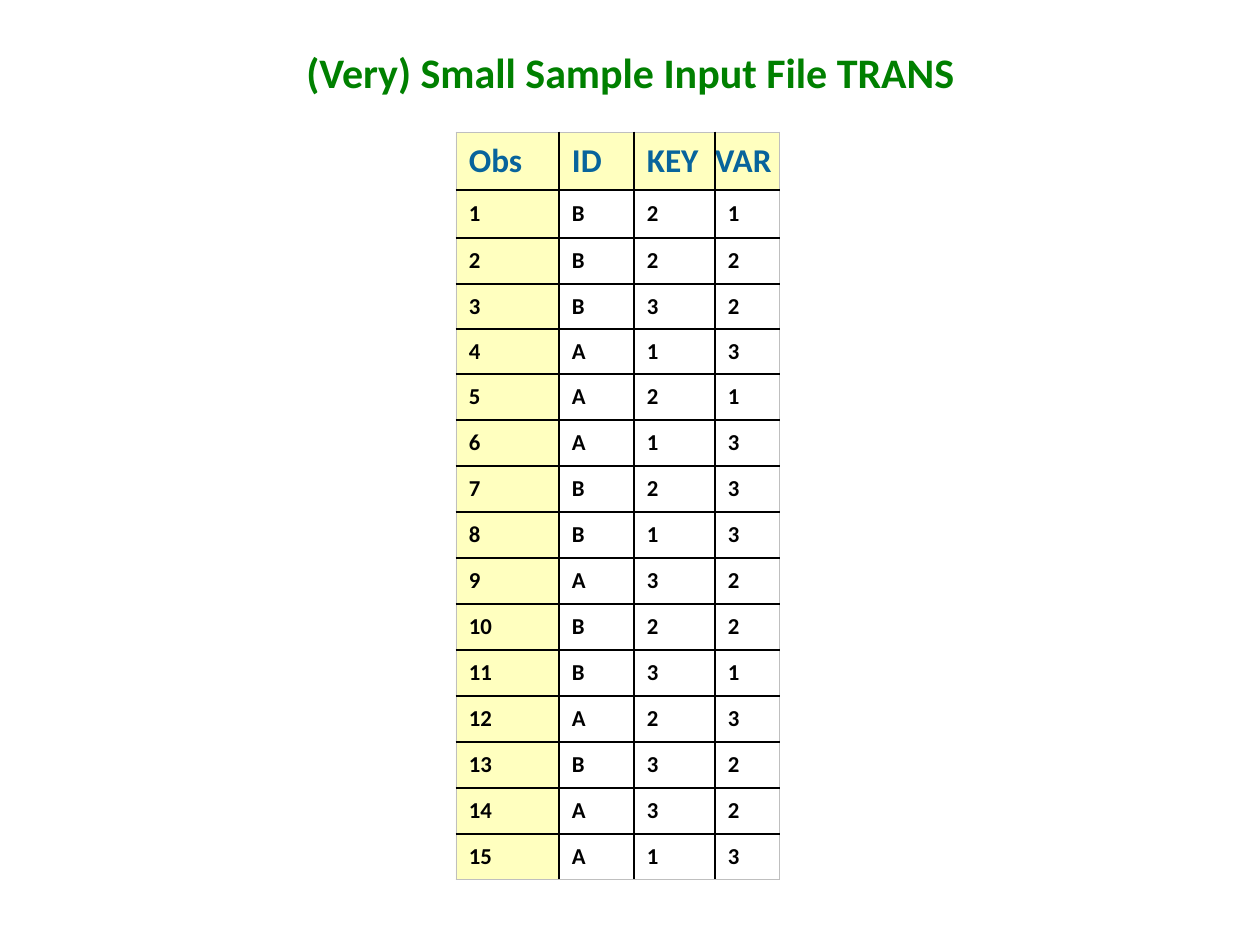
"""Build a slide with a small sample input table."""
from dataclasses import dataclass

from lxml import etree
from pptx import Presentation, util as u
from pptx.dml.color import RGBColor
from pptx.enum import text
from pptx.oxml import ns

PX_PER_INCH = 126
FONT = "Calibri"
GREEN = RGBColor(0x00, 0x80, 0x00)
BLUE = RGBColor(0x08, 0x64, 0x9C)
BLACK = RGBColor(0x00, 0x00, 0x00)
GRAY = RGBColor(0xBF, 0xBF, 0xBF)
YELLOW = RGBColor(0xFF, 0xFF, 0x00)
YELLOW_ALPHA = 25000

HEADERS = ("Obs", "ID", "KEY", "VAR")
OBSERVATIONS = (
    "B21", "B22", "B32", "A13", "A21", "A13", "B23", "B13",
    "A32", "B22", "B31", "A23", "B32", "A32", "A13",
)
COLUMN_WIDTHS = (103, 75, 81, 65)
ROW_HEIGHTS = (58, 48, 46, 45, 45) + (46,) * 11


@dataclass(frozen=True)
class Border:
    color: RGBColor
    width: float


@dataclass(frozen=True)
class CellStyle:
    size: int
    color: RGBColor
    shaded: bool
    inset_x: int = 13
    inset_y: int = 8


INNER = Border(BLACK, 1)
OUTER = Border(GRAY, 0.5)


def px(length: int) -> u.Emu:
    return u.Emu(round(length * 914400 / PX_PER_INCH))


def set_attributes(target, values: dict) -> None:
    for name, value in values.items():
        setattr(target, name, value)


def format_font(font, size: int, color: RGBColor) -> None:
    set_attributes(font, {"name": FONT, "size": u.Pt(size), "bold": True})
    font.color.rgb = color


def set_borders(cell, borders: dict[str, Border]) -> None:
    properties = cell._tc.get_or_add_tcPr()
    for index, (side, border) in enumerate(borders.items()):
        line = etree.Element(ns.qn(f"a:ln{side}"), w=str(u.Pt(border.width)))
        fill = etree.SubElement(line, ns.qn("a:solidFill"))
        etree.SubElement(fill, ns.qn("a:srgbClr"), val=str(border.color))
        properties.insert(index, line)


def fill_cell(cell, shaded: bool) -> None:
    if not shaded:
        cell.fill.background()
        return
    cell.fill.solid()
    cell.fill.fore_color.rgb = YELLOW
    color = cell._tc.tcPr.find(f".//{ns.qn('a:srgbClr')}")
    etree.SubElement(color, ns.qn("a:alpha"), val=str(YELLOW_ALPHA))


def write_cell(cell, content: str, style: CellStyle) -> None:
    set_attributes(cell, {
        "text": content,
        "vertical_anchor": text.MSO_ANCHOR.MIDDLE,
        "margin_left": px(style.inset_x),
        "margin_right": px(style.inset_x),
        "margin_top": px(style.inset_y),
        "margin_bottom": px(style.inset_y),
    })
    format_font(cell.text_frame.paragraphs[0].runs[0].font, style.size, style.color)
    fill_cell(cell, style.shaded)


def cell_style(row: int, column: int) -> CellStyle:
    if row > 0:
        return CellStyle(13, BLACK, column == 0)
    if HEADERS[column] == "VAR":
        return CellStyle(19, BLUE, True, 0, 0)
    return CellStyle(19, BLUE, True)


def add_title(slide, content: str) -> None:
    title = slide.shapes.title
    set_attributes(title, {
        "left": px(87), "top": px(35), "width": px(1087), "height": px(74),
    })
    set_attributes(title.text_frame, {
        "text": content, "word_wrap": True,
        "vertical_anchor": text.MSO_ANCHOR.MIDDLE,
    })
    paragraph = title.text_frame.paragraphs[0]
    paragraph.alignment = text.PP_ALIGN.CENTER
    format_font(paragraph.runs[0].font, 24, GREEN)


def add_sample_table(slide) -> None:
    records = [HEADERS] + [
        (str(number), *values) for number, values in enumerate(OBSERVATIONS, 1)
    ]
    last_row, last_column = len(records) - 1, len(HEADERS) - 1
    table = slide.shapes.add_table(
        len(records), len(HEADERS), px(456), px(132),
        px(sum(COLUMN_WIDTHS)), px(sum(ROW_HEIGHTS)),
    ).table
    set_attributes(table, {"first_row": False, "horz_banding": False})
    for column, width in zip(table.columns, COLUMN_WIDTHS):
        column.width = px(width)
    for row, height in zip(table.rows, ROW_HEIGHTS):
        row.height = px(height)
    for row, record in enumerate(records):
        for column, content in enumerate(record):
            cell = table.cell(row, column)
            write_cell(cell, content, cell_style(row, column))
            set_borders(cell, {
                "L": OUTER if column == 0 else INNER,
                "R": OUTER if column == last_column else INNER,
                "T": OUTER if row == 0 else INNER,
                "B": OUTER if row == last_row else INNER,
            })


def main() -> None:
    presentation = Presentation()
    set_attributes(presentation, {"slide_width": px(1260), "slide_height": px(945)})
    slide = presentation.slides.add_slide(presentation.slide_layouts[5])
    add_title(slide, "(Very) Small Sample Input File TRANS")
    add_sample_table(slide)
    presentation.save("out.pptx")


if __name__ == "__main__":
    main()
